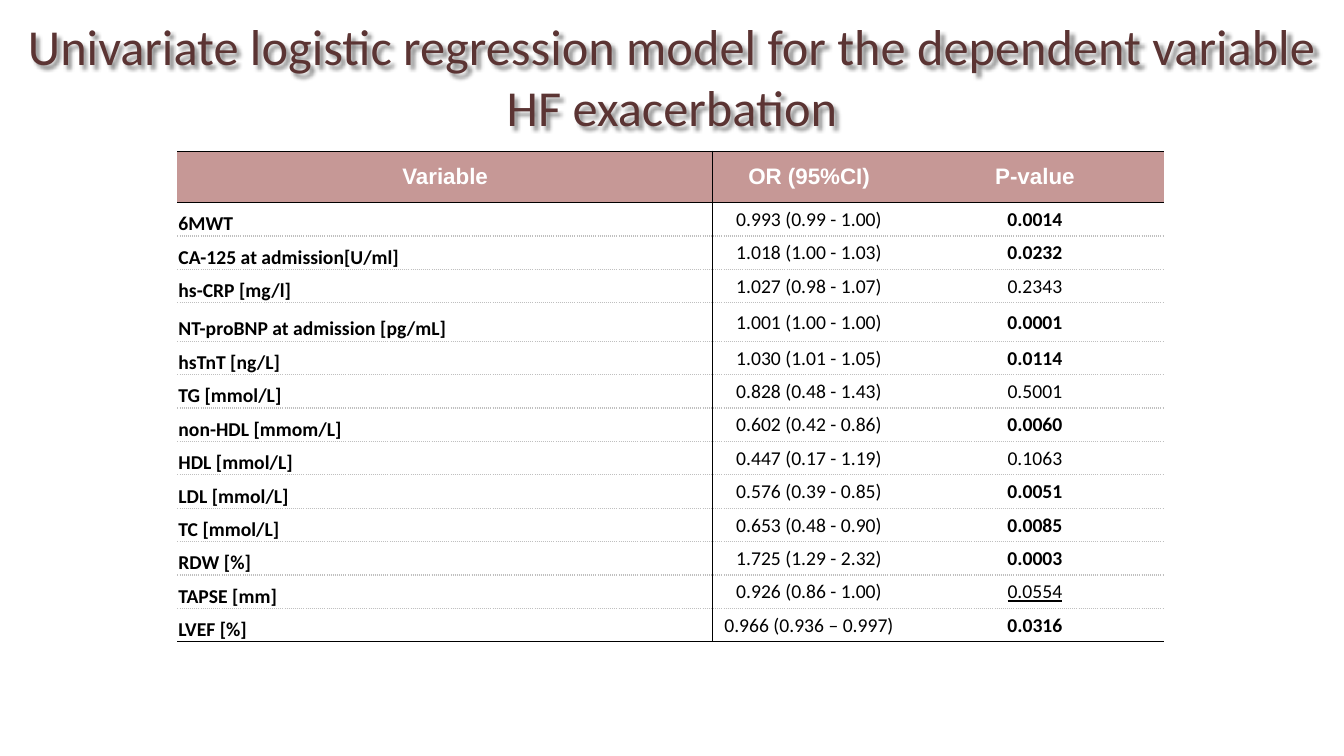
from lxml.etree import SubElement
from pptx import Presentation
from pptx.dml.color import RGBColor
from pptx.enum.text import MSO_ANCHOR as ANCHOR, PP_ALIGN as ALIGN
from pptx.oxml import parse_xml
from pptx.oxml.ns import nsdecls, qn
from pptx.util import Pt

TITLE = "Univariate logistic regression model for the dependent variable HF exacerbation"
HEADER = ("Variable", "OR (95%CI)", "P-value")
ROWS = [
    ("6MWT", "0.993 (0.99 - 1.00)", "0.0014"),
    ("CA-125 at admission[U/ml]", "1.018 (1.00 - 1.03)", "0.0232"),
    ("hs-CRP [mg/l]", "1.027 (0.98 - 1.07)", "0.2343"),
    ("NT-proBNP at admission [pg/mL]", "1.001 (1.00 - 1.00)", "0.0001"),
    ("hsTnT [ng/L]", "1.030 (1.01 - 1.05)", "0.0114"),
    ("TG [mmol/L]", "0.828 (0.48 - 1.43)", "0.5001"),
    ("non-HDL [mmom/L]", "0.602 (0.42 - 0.86)", "0.0060"),
    ("HDL [mmol/L]", "0.447 (0.17 - 1.19)", "0.1063"),
    ("LDL [mmol/L]", "0.576 (0.39 - 0.85)", "0.0051"),
    ("TC [mmol/L]", "0.653 (0.48 - 0.90)", "0.0085"),
    ("RDW [%]", "1.725 (1.29 - 2.32)", "0.0003"),
    ("TAPSE [mm]", "0.926 (0.86 - 1.00)", "0.0554"),
    ("LVEF [%]", "0.966 (0.936 – 0.997)", "0.0316"),
]
COLORS = {"title": "5B3433", "outline": "404040", "header": "C69896",
          "white": "FFFFFF", "black": "000000", "rule": "BFBFBF"}

PX = 9144  # 100 px to the inch
SLIDE_W, SLIDE_H = 1333, 750
TITLE_BOX = (0, 27, SLIDE_W, 97)
TABLE_BOX = (176, 150, 979, 487)
COL_W = (531, 191, 257)
HEADER_H, TALL_ROW, TALL_H = 51, 4, 38
ROW_H = (TABLE_BOX[3] - HEADER_H - TALL_H) / (len(ROWS) - 1)

SOLID, DOTTED = ("black", "solid"), ("rule", "sysDot")


def px(n):
    return round(n * PX)


def add_run(p, text, size, color, font="Calibri", bold=False, underline=False):
    r = p.add_run()
    r.text = text
    r.font.name, r.font.size = font, Pt(size)
    r.font.bold = bold
    if underline:
        r.font.underline = True
    r.font.color.rgb = RGBColor.from_string(COLORS[color])
    return r


def set_borders(cell, edges):
    """Set left, right, top and bottom lines; None leaves an edge bare."""
    tcPr = cell._tc.get_or_add_tcPr()
    for i, (side, edge) in enumerate(zip("LRTB", edges)):
        ln = tcPr.makeelement(qn(f"a:ln{side}"), {"w": str(Pt(1))})
        tcPr.insert(i, ln)
        if edge is None:
            SubElement(ln, qn("a:noFill"))
            continue
        color, dash = edge
        fill = SubElement(ln, qn("a:solidFill"))
        SubElement(fill, qn("a:srgbClr"), val=COLORS[color])
        SubElement(ln, qn("a:prstDash"), val=dash)


def add_title(s):
    box = s.shapes.add_textbox(*map(px, TITLE_BOX))
    tf = box.text_frame
    tf.word_wrap = True
    tf.vertical_anchor = ANCHOR.MIDDLE
    p = tf.paragraphs[0]
    p.alignment = ALIGN.CENTER
    r = add_run(p, TITLE, 36, "title")
    r.font._element.insert(0, parse_xml(
        f'<a:ln {nsdecls("a")} w="9525"><a:solidFill><a:srgbClr val="{COLORS["outline"]}">'
        '<a:alpha val="10000"/></a:srgbClr></a:solidFill></a:ln>'))
    box._element.spPr.append(parse_xml(
        f'<a:effectLst {nsdecls("a")}><a:outerShdw blurRad="38100" dist="31750" dir="2700000">'
        f'<a:srgbClr val="{COLORS["black"]}"><a:alpha val="45000"/></a:srgbClr>'
        '</a:outerShdw></a:effectLst>'))


def fill_cell(cell, text, row, col):
    header = row == 0
    p = cell.text_frame.paragraphs[0]
    p.alignment = ALIGN.LEFT if col == 0 and not header else ALIGN.CENTER
    cell.vertical_anchor = ANCHOR.BOTTOM if col == 0 and not header else ANCHOR.MIDDLE
    if header:
        cell.fill.solid()
        cell.fill.fore_color.rgb = RGBColor.from_string(COLORS["header"])
        add_run(p, text, 16, "white", "Arial", bold=True)
    else:
        cell.fill.background()
        cell.margin_left = cell.margin_right = cell.margin_top = px(1)
        cell.margin_bottom = 0
        significant = col == 2 and float(text) < 0.05
        borderline = col == 2 and 0.05 <= float(text) < 0.1
        add_run(p, text, 14, "black", bold=col == 0 or significant, underline=borderline)
    set_borders(cell, (SOLID if col == 1 else None,
                       SOLID if col == 0 else None,
                       SOLID if row <= 1 else DOTTED,
                       SOLID if row in (0, len(ROWS)) else DOTTED))


def add_results(s):
    frame = s.shapes.add_table(len(ROWS) + 1, len(HEADER), *map(px, TABLE_BOX))
    table = frame.table
    table.horz_banding = table.first_row = False
    for column, w in zip(table.columns, COL_W):
        column.width = px(w)
    for i, values in enumerate([HEADER, *ROWS]):
        table.rows[i].height = px({0: HEADER_H, TALL_ROW: TALL_H}.get(i, ROW_H))
        for j, text in enumerate(values):
            fill_cell(table.cell(i, j), text, i, j)


def main():
    prs = Presentation()
    prs.slide_width, prs.slide_height = px(SLIDE_W), px(SLIDE_H)
    s = prs.slides.add_slide(prs.slide_layouts[6])
    add_title(s)
    add_results(s)
    prs.save("out.pptx")


if __name__ == "__main__":
    main()
